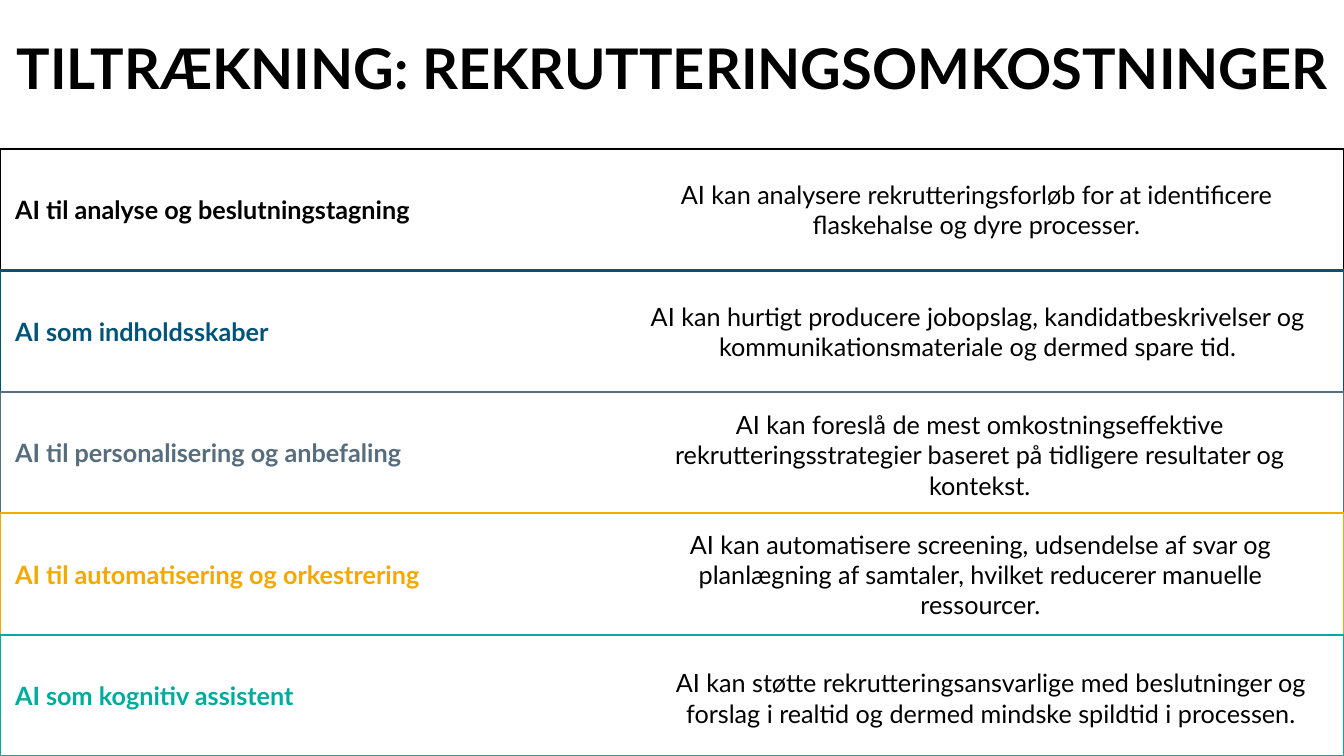
from pptx import Presentation
from pptx.dml.color import RGBColor
from pptx.enum.shapes import MSO_SHAPE
from pptx.enum.text import MSO_ANCHOR, PP_ALIGN
from pptx.util import Cm, Pt

FONT = "Lato"
BLACK = RGBColor(0x00, 0x00, 0x00)
BLUE = RGBColor(0x00, 0x54, 0x7A)
SLATE = RGBColor(0x55, 0x6D, 0x7E)
AMBER = RGBColor(0xF6, 0xA8, 0x00)
TEAL = RGBColor(0x00, 0xAC, 0x9C)

SLIDE_WIDTH, SLIDE_HEIGHT = 33.87, 19.05
TITLE_HEIGHT = 3.4
ROWS_TOP = 3.76
DESCRIPTION_WIDTH, DESCRIPTION_HEIGHT = 17.78, 3.05

# Label, colour, description, and the description's left and top within its row
ROWS = [
    ("AI til analyse og beslutningstagning", BLACK,
     "AI kan analysere rekrutteringsforløb for at identificere "
     "flaskehalse og dyre processer.", 15.72, 0),
    ("AI som indholdsskaber", BLUE,
     "AI kan hurtigt producere jobopslag, kandidatbeskrivelser og "
     "kommunikationsmateriale og dermed spare tid.", 15.75, 0),
    ("AI til personalisering og anbefaling", SLATE,
     "AI kan foreslå de mest omkostningseffektive rekrutteringsstrategier "
     "baseret på tidligere resultater og kontekst.", 15.8, 0.06),
    ("AI til automatisering og orkestrering", AMBER,
     "AI kan automatisere screening, udsendelse af svar og planlægning af "
     "samtaler, hvilket reducerer manuelle ressourcer.", 15.82, 0.02),
    ("AI som kognitiv assistent", TEAL,
     "AI kan støtte rekrutteringsansvarlige med beslutninger og forslag i "
     "realtid og dermed mindske spildtid i processen.", 16.08, 0.07),
]


def write_text(shape, text, size, color, bold, alignment):
    text_frame = shape.text_frame
    text_frame.word_wrap = True
    text_frame.vertical_anchor = MSO_ANCHOR.MIDDLE
    text_frame.text = text
    paragraph = text_frame.paragraphs[0]
    paragraph.alignment = alignment
    font = paragraph.runs[0].font
    font.name, font.size, font.bold = FONT, Pt(size), bold
    font.color.rgb = color


def add_centred_text(slide, left, top, width, height, text, size, bold=False):
    box = slide.shapes.add_textbox(Cm(left), Cm(top), Cm(width), Cm(height))
    write_text(box, text, size, BLACK, bold, PP_ALIGN.CENTER)


def add_band(group, left, top, width, height, label, color):
    band = group.shapes.add_shape(
        MSO_SHAPE.RECTANGLE, Cm(left), Cm(top), Cm(width), Cm(height))
    band.shadow.inherit = False
    band.fill.background()
    band.line.color.rgb = color
    band.line.width = Pt(1.5)
    write_text(band, label, 18, color, True, PP_ALIGN.LEFT)
    band.text_frame.margin_left = Cm(0.38)


def add_rows(slide, left, top, width, height):
    row_height = height / len(ROWS)
    # Outlined bands with their labels
    group = slide.shapes.add_group_shape()
    for index, (label, color, *_) in enumerate(ROWS):
        add_band(group, left, top + index * row_height, width, row_height,
                 label, color)
    # Descriptions on the right
    for index, (_, _, description, indent, drop) in enumerate(ROWS):
        add_centred_text(slide, left + indent, top + index * row_height + drop,
                         DESCRIPTION_WIDTH, DESCRIPTION_HEIGHT, description, 18)


def main():
    presentation = Presentation()
    presentation.slide_width = Cm(SLIDE_WIDTH)
    presentation.slide_height = Cm(SLIDE_HEIGHT)
    slide = presentation.slides.add_slide(presentation.slide_layouts[6])
    add_rows(slide, 0, ROWS_TOP, SLIDE_WIDTH, SLIDE_HEIGHT - ROWS_TOP)
    add_centred_text(slide, 0, 0, SLIDE_WIDTH, TITLE_HEIGHT,
                     "TILTRÆKNING: REKRUTTERINGSOMKOSTNINGER", 40, bold=True)
    presentation.save("out.pptx")


if __name__ == "__main__":
    main()
